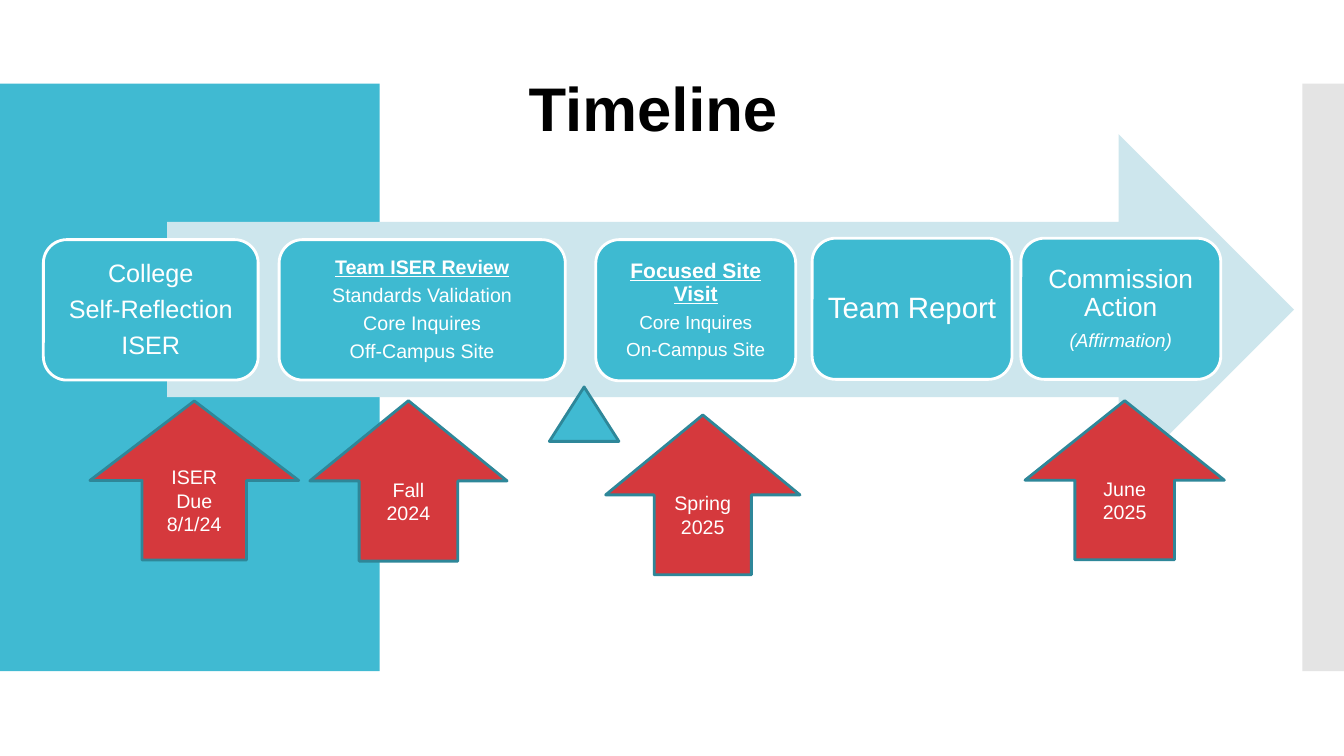
from lxml.etree import SubElement
from pptx import Presentation
from pptx.dml.color import RGBColor
from pptx.enum.shapes import MSO_SHAPE
from pptx.enum.text import MSO_ANCHOR, PP_ALIGN
from pptx.oxml.ns import qn
from pptx.util import Pt

COLORS = {
    "panel": "40BAD2", "strip": "C8C8C8", "band": "CDE6ED", "stage": "3EBAD1",
    "date": "D5393D", "outline": "2E8799", "white": "FFFFFF", "black": "000000",
}
FONT = "Arial"
DATE_SIZE = 14

# box (left, top, width, height), inset, lines of (wording, size, style)
STAGES = [
    ((31, 171.2, 153.4, 100.3), 5,
     [("College", 18, ""), ("Self-Reflection", 18, ""), ("ISER", 18, "")]),
    ((199.4, 171.2, 204.4, 100.3), 4.2,
     [("Team ISER Review", 14, "heading"), ("Standards Validation", 14, ""),
      ("Core Inquires", 14, ""), ("Off-Campus Site", 14, "")]),
    ((425.6, 171.2, 142.8, 100.8), 4.2,
     [("Focused Site Visit", 15, "heading"), ("Core Inquires", 13.5, ""),
      ("On-Campus Site", 13.5, "")]),
    ((580.1, 170.2, 142.8, 100.8), 6.3, [("Team Report", 21, "")]),
    ((729.2, 170.2, 142.8, 100.8), 5.7,
     [("Commission Action", 18.8, ""), ("(Affirmation)", 13.5, "italic")]),
]

DATES = [
    ((64.2, 286.4, 149.2, 113.6), ["ISER", "Due", "8/1/24"]),
    ((221.3, 286.2, 140.9, 114.6), ["Fall", "2024"]),
    ((432.6, 296.4, 138.8, 114.2), ["Spring", "2025"]),
    ((732.2, 286.2, 142.4, 113.6), ["June", "2025"]),
]


def rgb(name):
    return RGBColor.from_string(COLORS[name])


def place(item, box):
    item.left, item.top, item.width, item.height = map(Pt, box)


def add_block(slide, kind, box, fill, outline=None):
    block = slide.shapes.add_shape(kind, *map(Pt, box))
    block.shadow.inherit = False
    block.fill.solid()
    block.fill.fore_color.rgb = rgb(fill)
    if outline:
        block.line.color.rgb = rgb(outline)
        block.line.width = Pt(2)
    else:
        block.line.fill.background()
    return block


def set_insets(frame, horizontal, vertical):
    frame.margin_left = frame.margin_right = Pt(horizontal)
    frame.margin_top = frame.margin_bottom = Pt(vertical)
    frame.word_wrap = True


def write_lines(frame, lines, spacing=1.0, gap=0.0):
    """Write centred white lines; gap is a share of the preceding line's size."""
    frame.vertical_anchor = MSO_ANCHOR.MIDDLE
    previous_size = 0
    for index, (wording, size, style) in enumerate(lines):
        line = frame.paragraphs[0] if index == 0 else frame.add_paragraph()
        line.text = wording
        line.alignment = PP_ALIGN.CENTER
        line.line_spacing = spacing
        line.space_before = Pt(round(previous_size * gap, 1))
        line.font.name = FONT
        line.font.size = Pt(size)
        line.font.color.rgb = rgb("white")
        line.font.bold = line.font.underline = style == "heading"
        line.font.italic = style == "italic"
        previous_size = size


def add_side_panels(slide, top, height):
    add_block(slide, MSO_SHAPE.RECTANGLE, (0, top, 271.2, height), "panel")
    strip = add_block(slide, MSO_SHAPE.RECTANGLE, (930.4, top, 29.6, height), "strip")
    tint = strip.fill._xPr.find(qn("a:solidFill"))[0]
    SubElement(tint, qn("a:alpha"), val="49000")


def add_title(slide, box):
    title = slide.shapes.title
    place(title, box)
    frame = title.text_frame
    frame.text = "Timeline"
    frame.vertical_anchor = MSO_ANCHOR.TOP
    set_insets(frame, 7.2, 3.6)
    heading = frame.paragraphs[0]
    heading.alignment = PP_ALIGN.CENTER
    heading.line_spacing = 0.7
    heading.font.name = FONT
    heading.font.size = Pt(44)
    heading.font.bold = True
    heading.font.color.rgb = rgb("black")


def add_stage(slide, box, inset, lines):
    stage = add_block(slide, MSO_SHAPE.ROUNDED_RECTANGLE, box, "stage", "white")
    set_insets(stage.text_frame, inset, inset)
    write_lines(stage.text_frame, lines, spacing=0.9, gap=0.35)


def add_date(slide, box, words):
    date = add_block(slide, MSO_SHAPE.UP_ARROW, box, "date", "outline")
    set_insets(date.text_frame, 7.2, 3.6)
    write_lines(date.text_frame, [(word, DATE_SIZE, "") for word in words])


def add_timeline(slide):
    add_block(slide, MSO_SHAPE.RIGHT_ARROW, (119.3, 95.8, 805, 250.6), "band")
    for stage in STAGES:
        add_stage(slide, *stage)
    for date in DATES:
        add_date(slide, *date)
    add_block(slide, MSO_SHAPE.FLOWCHART_EXTRACT, (392.4, 276.4, 49.7, 38.9),
              "panel", "outline")


def main():
    deck = Presentation()
    deck.slide_width, deck.slide_height = Pt(960), Pt(540)
    slide = deck.slides.add_slide(deck.slide_layouts[5])
    add_side_panels(slide, top=59.8, height=419.6)
    add_title(slide, (42.5, 60.5, 848.2, 50.4))
    add_timeline(slide)
    deck.save("out.pptx")


if __name__ == "__main__":
    main()
